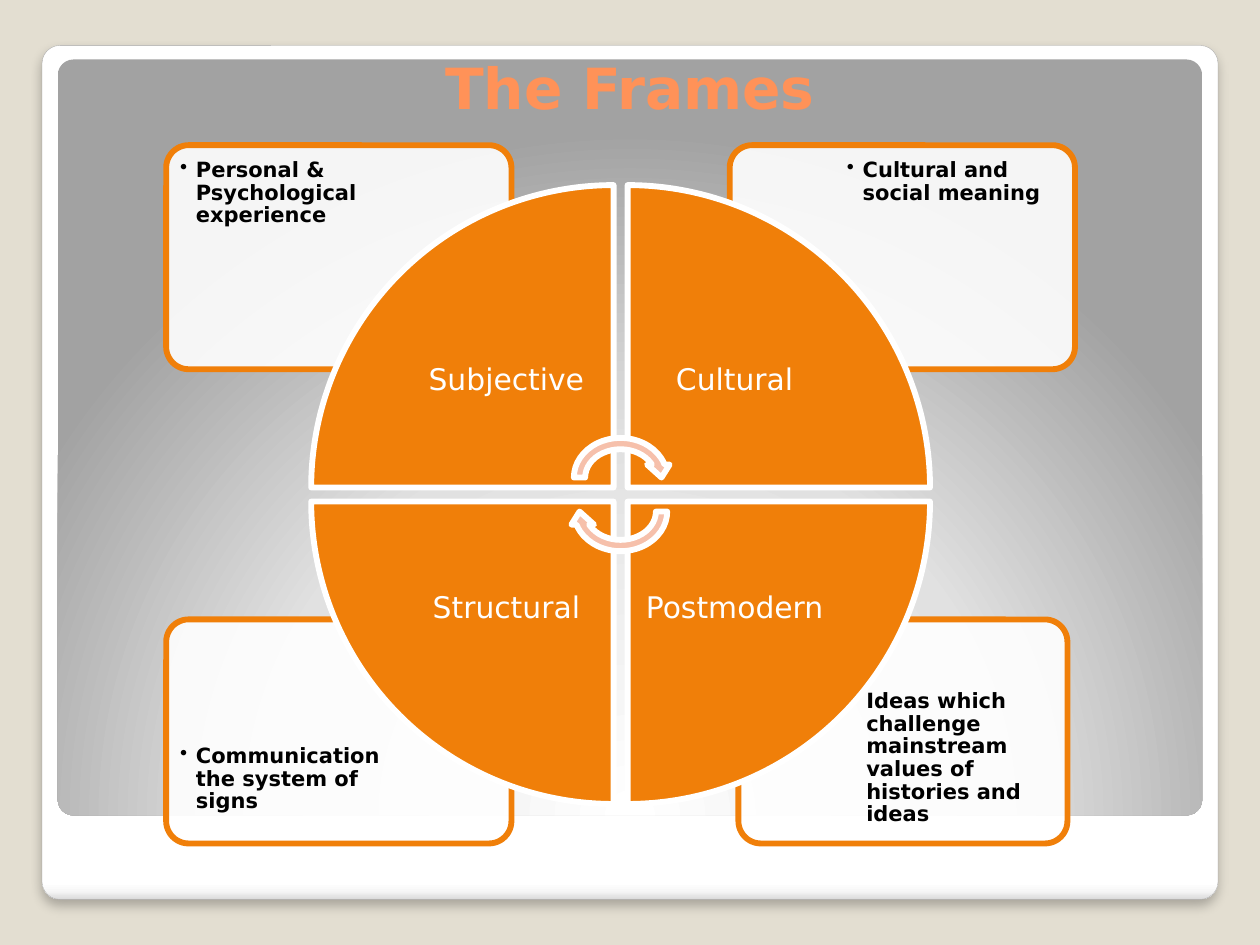
"""Build the slide on the four frames as a cycle of quadrants."""
import pptx
import pptx.util
import pptx.dml.color
import pptx.enum.shapes
import pptx.enum.text
import pptx.oxml
import pptx.oxml.ns

Pt = pptx.util.Pt
RGBColor = pptx.dml.color.RGBColor
MSO = pptx.enum.shapes.MSO_SHAPE
ALIGN = pptx.enum.text.PP_ALIGN
ANCHOR = pptx.enum.text.MSO_ANCHOR
NS = pptx.oxml.ns.nsdecls("a")

SAND = RGBColor(0xE3, 0xDE, 0xD1)
GREY = RGBColor(0xA4, 0xA4, 0xA4)
PEACH = RGBColor(0xFF, 0x92, 0x58)
ORANGE = RGBColor(0xF0, 0x7F, 0x09)
PINK = RGBColor(0xF6, 0xC0, 0xAB)
WHITE = RGBColor(0xFF, 0xFF, 0xFF)
BLACK = RGBColor(0, 0, 0)

deck = pptx.Presentation()
deck.slide_width, deck.slide_height = Pt(720), Pt(540)
slide = deck.slides.add_slide(deck.slide_layouts[6])
slide.background.fill.solid()
slide.background.fill.fore_color.rgb = SAND


def draw(kind, box, fill=None, line=None, width=3.35):
    shape = slide.shapes.add_shape(kind, *map(Pt, box))
    shape.shadow.inherit = False
    if fill is not None:
        shape.fill.solid()
        shape.fill.fore_color.rgb = fill
    if line is None:
        shape.line.fill.background()
    else:
        shape.line.color.rgb = line
        shape.line.width = Pt(width)
    return shape


def write(box, text, size, color, inset, anchor, align, bold):
    frame = slide.shapes.add_textbox(*map(Pt, box)).text_frame
    frame.word_wrap = True
    frame.vertical_anchor = anchor
    frame.margin_left = frame.margin_right = Pt(inset)
    frame.margin_top = frame.margin_bottom = Pt(inset)
    para = frame.paragraphs[0]
    para.text = text
    para.alignment = align
    para.font.name = "DejaVu Sans"
    para.font.size = Pt(size)
    para.font.bold = bold
    para.font.color.rgb = color
    return para


panels = [
    ((24, 26, 672, 488), GREY,
     [(0, "FFFFFF"), (98, "FFFFFF"), (99, "F7F7F7"), (100, "DADADA")],
     '<a:lin ang="5400000" scaled="0"/>'),
    ((33, 34, 654, 432), None,
     [(0, "FFFFFF"), (55, "E1E1E1"), (100, "A2A2A2")],
     '<a:path path="circle"><a:fillToRect l="50000" t="175000"'
     ' r="50000" b="-75000"/></a:path>'),
]
for box, line, stops, way in panels:
    panel = draw(MSO.ROUNDED_RECTANGLE, box, line=line, width=0.16)
    panel.adjustments[0] = 0.021
    marks = "".join(f'<a:gs pos="{pos * 1000}"><a:srgbClr val="{tint}"/></a:gs>'
                    for pos, tint in stops)
    panel._element.spPr.insert(2, pptx.oxml.parse_xml(
        f'<a:gradFill {NS} rotWithShape="1"><a:gsLst>{marks}</a:gsLst>{way}</a:gradFill>'))
    if line is not None:
        glow = panel._element.spPr.find(pptx.oxml.ns.qn("a:effectLst"))
        glow.append(pptx.oxml.parse_xml(
            f'<a:outerShdw {NS} blurRad="{Pt(6)}" dist="{Pt(4)}" dir="5400000"'
            ' rotWithShape="0"><a:srgbClr val="000000"><a:alpha val="25000"/>'
            '</a:srgbClr></a:outerShdw>'))

write((36, 21.6, 648, 49.7), "The Frames", 32.4, PEACH, 2,
      ANCHOR.BOTTOM, ALIGN.CENTER, True)

notes = [
    ((422, 354, 188, 128), (481, 389.5, 126, 90),
     "Ideas which challenge mainstream values of histories and ideas"),
    ((95, 354, 197.3, 128), (98, 421, 132.5, 58),
     "Communication the system of signs"),
    ((417, 83, 197.3, 128), (479, 86, 132.5, 90),
     "Cultural and social meaning"),
    ((95, 83, 197.3, 128), (98, 86, 132.5, 90),
     "Personal & Psychological experience"),
]
for card, box, text in notes:
    shape = draw(MSO.ROUNDED_RECTANGLE, card, WHITE, ORANGE)
    shape.adjustments[0] = 0.1
    tint = shape._element.spPr.find(".//" + pptx.oxml.ns.qn("a:srgbClr"))
    tint.append(pptx.oxml.parse_xml(f'<a:alpha {NS} val="90000"/>'))
    para = write(box, text, 12, BLACK, 5, ANCHOR.TOP, ALIGN.LEFT, True)
    para.line_spacing = 0.9
    props = para._p.get_or_add_pPr()
    props.set("marL", str(Pt(9)))
    props.set("indent", str(Pt(-9)))
    props.append(pptx.oxml.parse_xml(f'<a:buChar {NS} char="•"/>'))
    props.append(props.find(pptx.oxml.ns.qn("a:defRPr")))

SIDE, STEP, INNER = 172.8, 180.8, 122.4
wedges = [("Subjective", 0, 0), ("Cultural", 1, 0),
          ("Postmodern", 1, 1), ("Structural", 0, 1)]
for turn, (name, col, row) in enumerate(wedges):
    left, top = 177.85 + col * STEP, 105.8 + row * STEP
    wedge = draw(MSO.PIE_WEDGE, (left, top, SIDE, SIDE), ORANGE, WHITE)
    wedge.rotation = 90 * turn
    inset = SIDE - INNER
    box = (left + inset * (1 - col), top + inset * (1 - row), INNER, INNER)
    para = write(box, name, 17, WHITE, 9.4, ANCHOR.MIDDLE, ALIGN.CENTER, False)
    para.line_spacing = 0.9

for top, turn in ((247, 0), (266.4, 180)):
    arrow = draw(MSO.CIRCULAR_ARROW, (324.7, top, 59.8, 51.8), PINK, WHITE)
    arrow.rotation = turn

deck.save("out.pptx")
